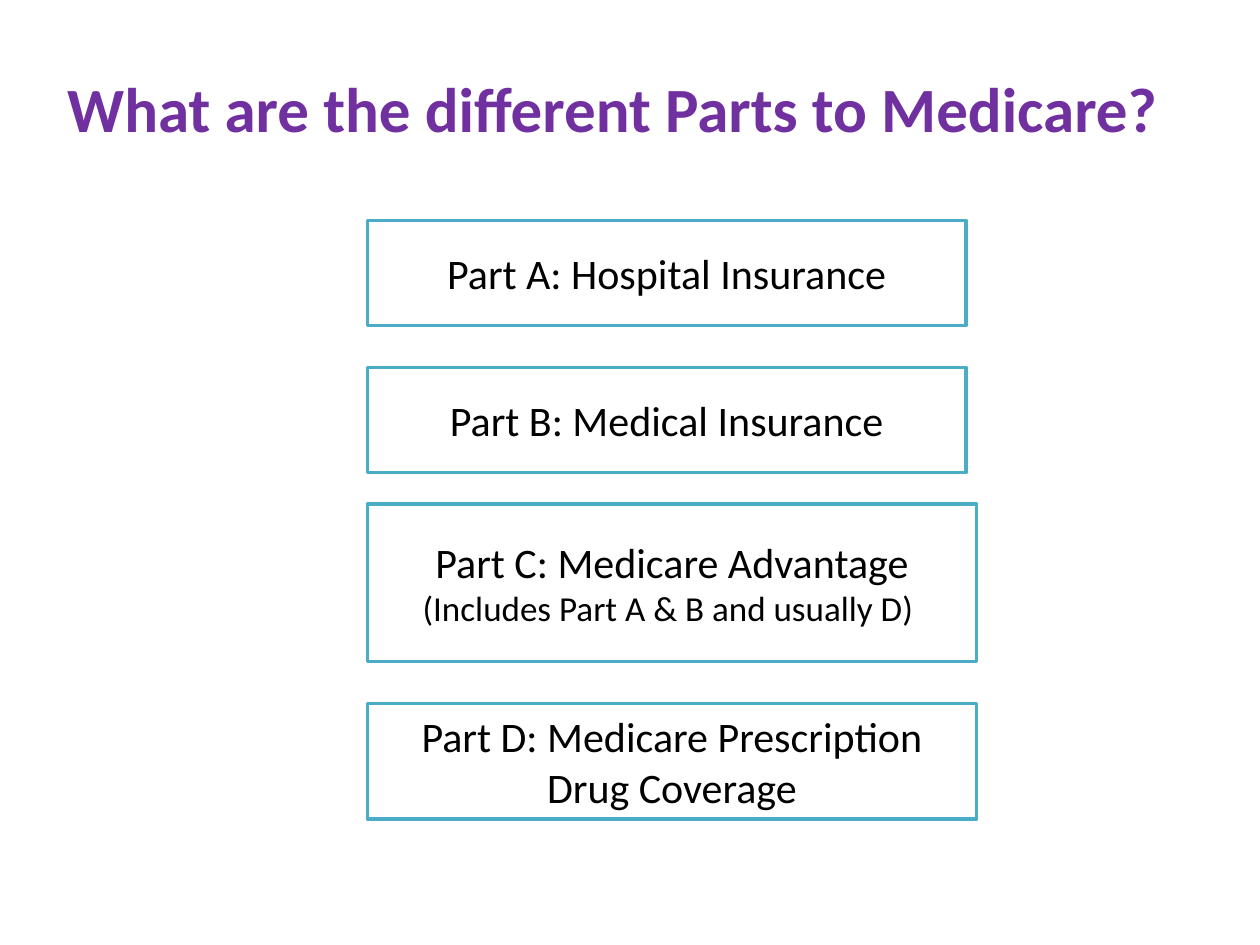
"""Build a slide that lists the four parts of Medicare."""
import pptx
import pptx.dml.color
import pptx.enum.shapes
import pptx.enum.text
import pptx.util

PX = 9525
THEME = {
    "font": "Calibri",
    "title": "7030A0", "text": "000000", "fill": "FFFFFF", "edge": "4BACC6",
    "big": 36, "main": 24, "note": 20, "line": 2,
}


def color(name):
    return pptx.dml.color.RGBColor.from_string(THEME[name])


def style(run, size, tint, bold=False):
    run.font.name = THEME["font"]
    run.font.size = pptx.util.Pt(THEME[size])
    run.font.color.rgb = color(tint)
    run.font.bold = bold


deck = pptx.Presentation()
deck.slide_width = 960 * PX
deck.slide_height = 720 * PX
slide = deck.slides.add_slide(deck.slide_layouts[6])

parts = [
    (168, 456, 80, ["Part A: Hospital Insurance"]),
    (280, 456, 80, ["Part B: Medical Insurance"]),
    (384, 464, 120, ["Part C: Medicare Advantage ", "(Includes Part A & B and usually D) "]),
    (536, 464, 88, ["Part D: Medicare Prescription Drug Coverage"]),
]
for top, width, height, texts in parts:
    box = slide.shapes.add_shape(
        pptx.enum.shapes.MSO_SHAPE.RECTANGLE, 280 * PX, top * PX, width * PX, height * PX)
    box.shadow.inherit = False
    box.fill.solid()
    box.fill.fore_color.rgb = color("fill")
    box.line.color.rgb = color("edge")
    box.line.width = pptx.util.Pt(THEME["line"])
    frame = box.text_frame
    frame.word_wrap = True
    frame.vertical_anchor = pptx.enum.text.MSO_ANCHOR.MIDDLE
    para = frame.paragraphs[0]
    para.alignment = pptx.enum.text.PP_ALIGN.CENTER
    for text, size in zip(texts, ["main", "note"]):
        run = para.add_run()
        run.text = text
        style(run, size, "text")

title = slide.shapes.add_textbox(24 * PX, 48 * PX, 896 * PX, 68 * PX)
frame = title.text_frame
frame.word_wrap = True
frame.auto_size = pptx.enum.text.MSO_AUTO_SIZE.SHAPE_TO_FIT_TEXT
frame.text = "What are the different Parts to Medicare? "
para = frame.paragraphs[0]
para.alignment = pptx.enum.text.PP_ALIGN.CENTER
style(para.runs[0], "big", "title", bold=True)

deck.save("out.pptx")
